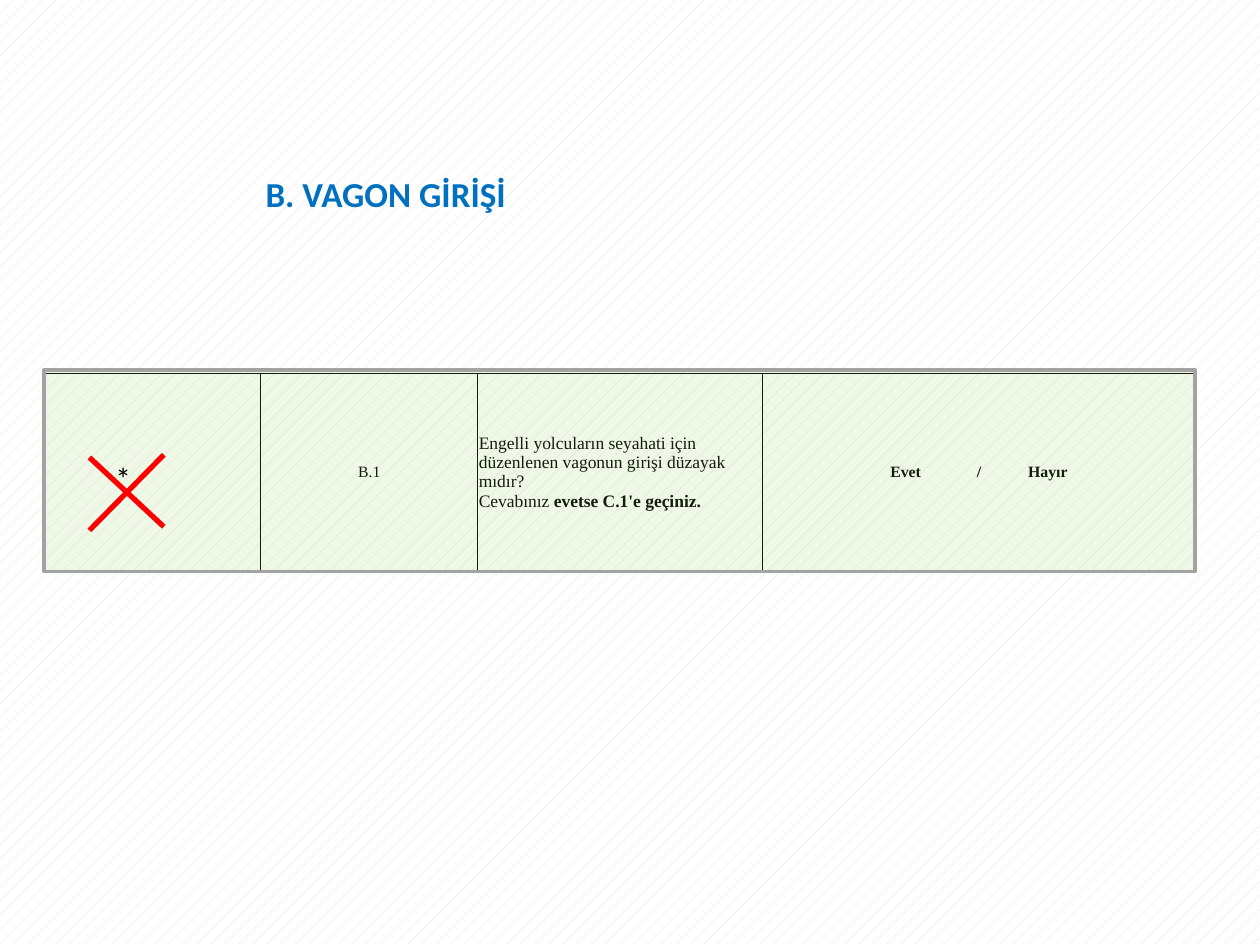
from lxml import etree
from pptx import Presentation
from pptx.dml.color import RGBColor
from pptx.enum import dml, shapes, text
from pptx.oxml.ns import qn
from pptx.util import Pt


def color(value):
    return RGBColor.from_string(value)


def style(paragraph, size, name, value="000000", bold=False):
    font = paragraph.font
    font.size, font.name, font.bold = Pt(size), name, bold
    font.color.rgb = color(value)


deck = Presentation()
deck.slide_width, deck.slide_height = Pt(720), Pt(540)
slide = deck.slides.add_slide(deck.slide_layouts[6])
backdrop = slide.background.fill
backdrop.patterned()
backdrop.pattern = dml.MSO_PATTERN.PERCENT_10
backdrop.fore_color.rgb = color("E0E0E0")
backdrop.back_color.rgb = color("FFFFFF")

heading = slide.shapes.add_textbox(Pt(144.7), Pt(95), Pt(271.4), Pt(31.7)).text_frame
heading.word_wrap = True
heading.text = "B. VAGON GİRİŞİ"
style(heading.paragraphs[0], 20, "Calibri", "0070C0", True)

question_table = slide.shapes.add_table(1, 4, Pt(25.2), Pt(213.1), Pt(658.8), Pt(113)).table
question_table.first_row = question_table.horz_banding = False
for column, width in zip(question_table.columns, (123.9, 123.9, 162.8, 247.7)):
    column.width = Pt(width)

cells = question_table.rows[0].cells
for cell in cells:
    cell.margin_left = cell.margin_right = cell.margin_top = Pt(0.7)
    cell.margin_bottom = Pt(0)
    cell.vertical_anchor = text.MSO_ANCHOR.MIDDLE
    properties = cell._tc.get_or_add_tcPr()
    for side in ("lnL", "lnR", "lnT", "lnB"):
        border = etree.SubElement(properties, qn(f"a:{side}"), w=str(Pt(0.5)))
        paint = etree.SubElement(border, qn("a:solidFill"))
        etree.SubElement(paint, qn("a:srgbClr"), val="000000")
    cell.fill.background()

mark_cell, code_cell, question_cell, answer_cell = cells
code_cell.text = "B.1"
code = code_cell.text_frame.paragraphs[0]
code.alignment = text.PP_ALIGN.CENTER
style(code, 9, "Times New Roman")

question = question_cell.text_frame.paragraphs[0]
question.add_run().text = "Engelli yolcuların seyahati için düzenlenen vagonun girişi düzayak mıdır?"
question.add_line_break()
question.add_run().text = "Cevabınız "
condition = question.add_run()
condition.text = "evetse C.1'e geçiniz."
condition.font.bold = True
style(question, 10, "Times New Roman")

answer_cell.margin_left = Pt(73)
answer_cell.text = "Evet\t/\tHayır"
answer = answer_cell.text_frame.paragraphs[0]
style(answer, 9, "Times New Roman", bold=True)
tabs = etree.Element(qn("a:tabLst"))
for stop in (49.5, 78.8):
    etree.SubElement(tabs, qn("a:tab"), pos=str(Pt(stop)), algn="l")
answer._p.get_or_add_pPr().insert(0, tabs)

highlight = slide.shapes.add_shape(
    shapes.MSO_SHAPE.RECTANGLE, Pt(25.2), Pt(211.5), Pt(657.7), Pt(115.2))
highlight.shadow.inherit = False
highlight.fill.solid()
highlight.fill.fore_color.rgb = color("92D050")
tint = highlight._element.spPr.find(qn("a:solidFill")).find(qn("a:srgbClr"))
etree.SubElement(tint, qn("a:alpha"), val="14000")
highlight.line.color.rgb = color("A3A3A3")
highlight.line.width = Pt(2)

for start_y, end_y in ((301, 261.4), (259.9, 303.1)):
    stroke = slide.shapes.add_connector(
        shapes.MSO_CONNECTOR.STRAIGHT, Pt(93.6), Pt(start_y), Pt(51.1), Pt(end_y))
    stroke.line.color.rgb = color("FF0000")
    stroke.line.width = Pt(3)
    etree.SubElement(stroke._element.spPr, qn("a:effectLst"))

asterisk = slide.shapes.add_textbox(Pt(58.9), Pt(258.5), Pt(97.9), Pt(28.8)).text_frame
asterisk.word_wrap = True
asterisk.text = "*"
style(asterisk.paragraphs[0], 18, "Calibri")

deck.save("out.pptx")
